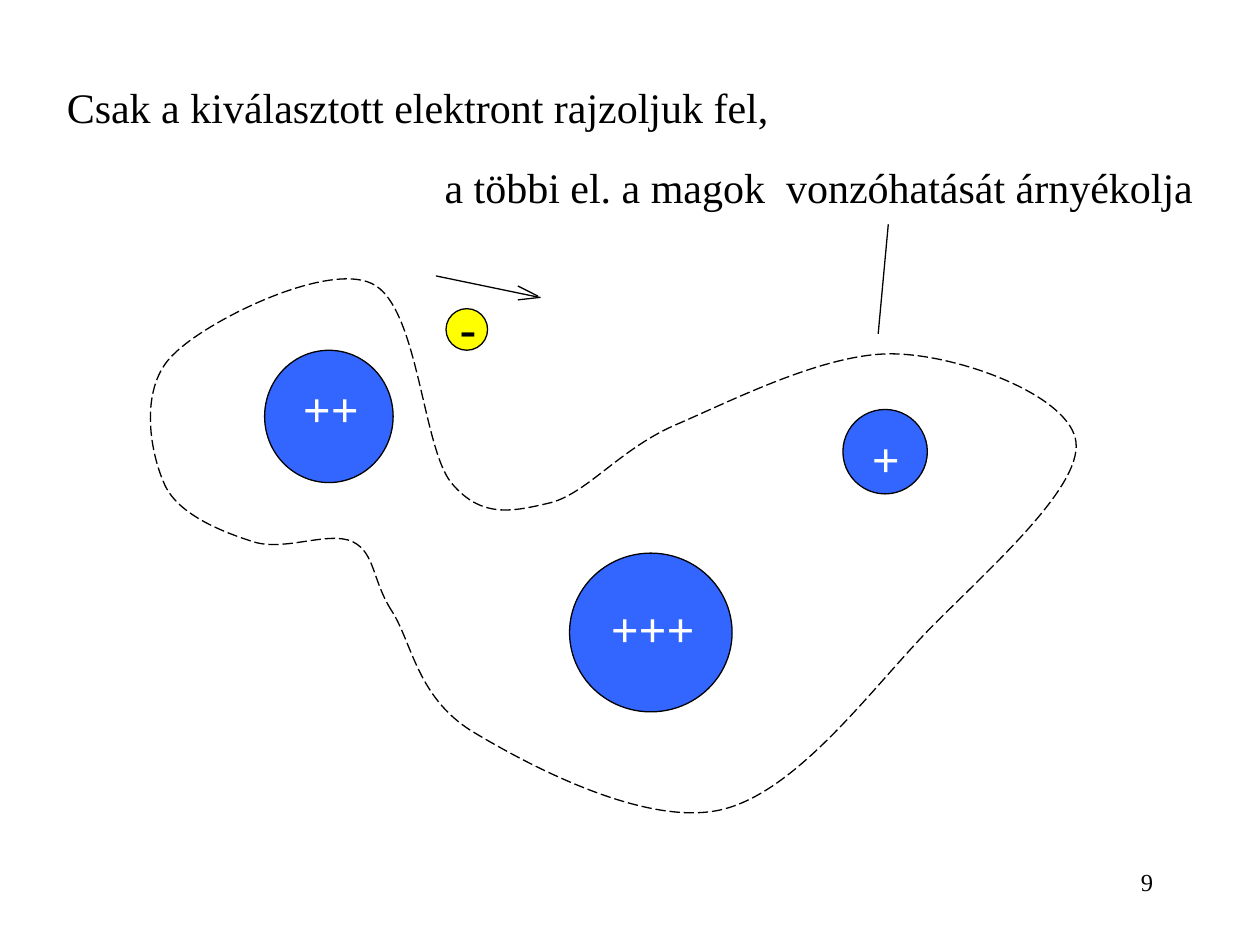
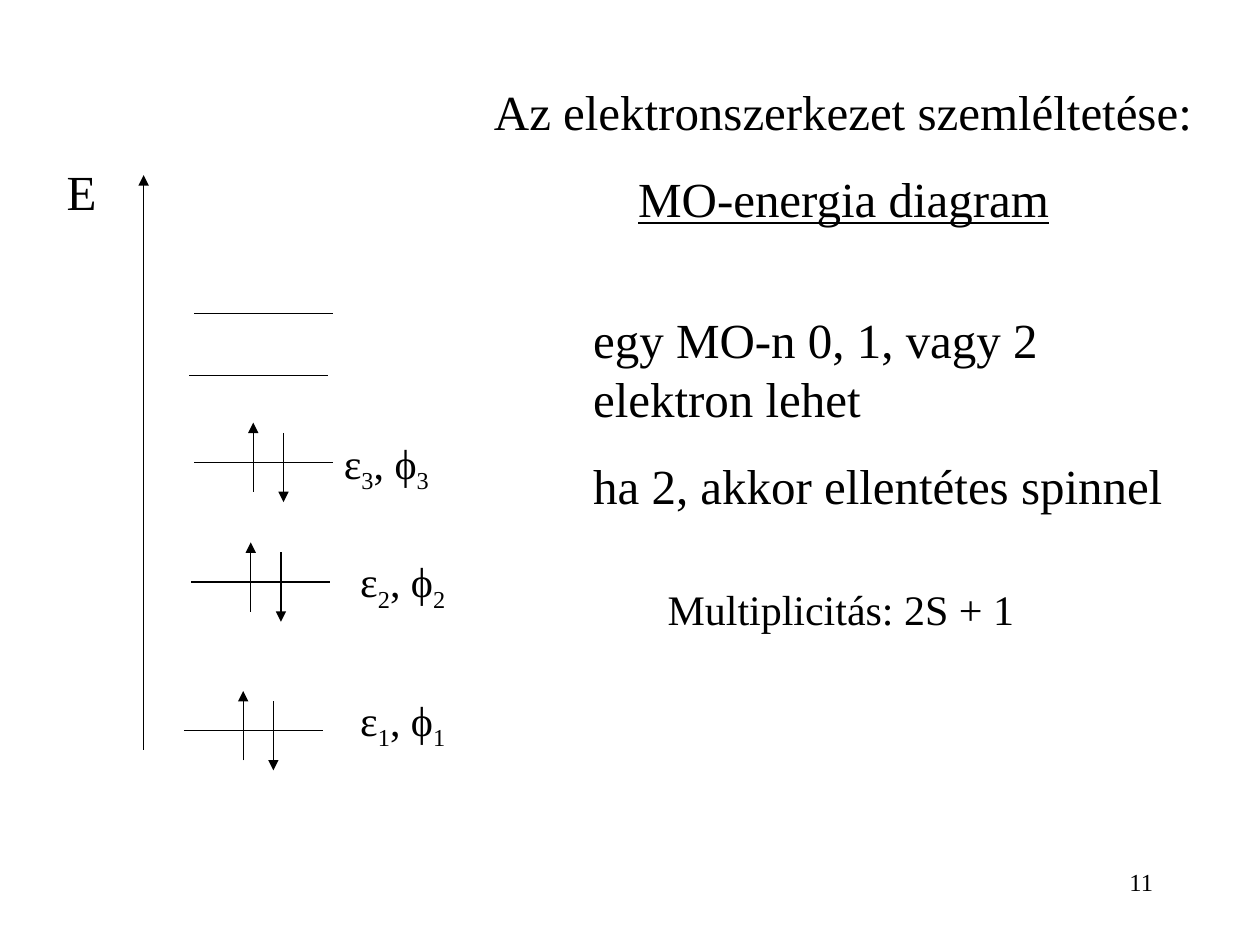
from lxml.etree import SubElement
from pptx import Presentation
from pptx.dml.color import RGBColor
from pptx.enum.dml import MSO_LINE
from pptx.enum.shapes import MSO_CONNECTOR, MSO_SHAPE
from pptx.enum.text import MSO_ANCHOR, MSO_AUTO_SIZE, PP_ALIGN
from pptx.oxml.ns import qn
from pptx.util import Inches, Pt

BLACK = RGBColor(0x00, 0x00, 0x00)
WHITE = RGBColor(0xFF, 0xFF, 0xFF)
YELLOW = RGBColor(0xFF, 0xFF, 0x00)
BLUE = RGBColor(0x33, 0x66, 0xFF)
FONT = "Times New Roman"
COLUMNS, ROWS = 100, 75

CLOUD_START = (31.1, 48.5)
CLOUD_CURVES = [
    [(29.5, 46), (29.8, 43.9), (28, 43)],
    [(26.1, 42.1), (22.6, 43.8), (20.1, 43)],
    [(17.6, 42.2), (14, 40.8), (13, 38.3)],
    [(11.9, 35.8), (11, 30.7), (13.8, 28.1)],
    [(16.5, 25.4), (25.9, 20.8), (29.5, 22.5)],
    [(33.2, 24.2), (33.5, 35.4), (35.8, 38.3)],
    [(38.2, 41.2), (40.7, 40.6), (43.7, 39.9)],
    [(46.7, 39.1), (49.3, 35.5), (53.9, 33.6)],
    [(58.5, 31.6), (66, 27.8), (71.3, 28.1)],
    [(76.5, 28.3), (85, 31.5), (85.4, 35.1)],
    [(85.8, 38.8), (78.4, 45.2), (73.6, 50.1)],
    [(68.9, 55), (63.1, 63), (57.1, 64.3)],
    [(51, 65.6), (41.7, 60.6), (37.4, 58)],
    [(33.1, 55.3), (32.7, 51), (31.1, 48.5)],
]


def apply(target, values):
    for name, value in values.items():
        setattr(target, name, value)


class Sketch:
    def __init__(self):
        self.deck = Presentation()
        apply(self.deck, {"slide_width": Inches(10), "slide_height": Inches(7.5)})
        self.column = self.deck.slide_width / COLUMNS
        self.row = self.deck.slide_height / ROWS

    def grid(self, x, y):
        return round(x * self.column), round(y * self.row)

    def area(self, left, top, width, height):
        return *self.grid(left, top), *self.grid(width, height)

    def new_page(self, number, title_area, title, size):
        self.page = self.deck.slides.add_slide(self.deck.slide_layouts[5])
        box = self.page.shapes.title
        apply(box, dict(zip(("left", "top", "width", "height"), self.area(*title_area))))
        self.fill_text(box, title, size)
        self.text((71.7, 68.3, 20.8, 5), [number], 14, align=PP_ALIGN.RIGHT)

    def text(self, area, paragraphs, size, **style):
        self.fill_text(self.page.shapes.add_textbox(*self.area(*area)), paragraphs, size, **style)

    def fill_text(self, box, paragraphs, size, align=PP_ALIGN.LEFT, color=BLACK,
                  bold=False, anchor=MSO_ANCHOR.TOP, wrap=True):
        frame = box.text_frame
        apply(frame, {"word_wrap": wrap, "auto_size": MSO_AUTO_SIZE.NONE,
                      "vertical_anchor": anchor})
        for index, content in enumerate(paragraphs):
            para = frame.add_paragraph() if index else frame.paragraphs[0]
            apply(para, {"alignment": align, "space_before": Pt(size * 0.57 if index else 0)})
            for part in [content] if isinstance(content, str) else content:
                words, extra = (part, {}) if isinstance(part, str) else part
                span = para.add_run()
                span.text = words
                apply(span.font, {"name": FONT, "size": Pt(size), "bold": bold})
                span.font.color.rgb = color
                if "align" in extra:
                    para.alignment = extra["align"]
                if "underline" in extra:
                    span.font.underline = extra["underline"]
                if "baseline" in extra:
                    span.font._element.set("baseline", extra["baseline"])

    def outline(self, shape, fill, dash=None):
        shape.shadow.inherit = False
        shape.fill.solid()
        shape.fill.fore_color.rgb = fill
        shape.line.color.rgb = BLACK
        apply(shape.line, {"width": Pt(0.75), "dash_style": dash})

    def particle(self, area, fill, label_area, label, **style):
        self.outline(self.page.shapes.add_shape(MSO_SHAPE.OVAL, *self.area(*area)), fill)
        self.text(label_area, [label], 28, align=PP_ALIGN.CENTER, bold=True,
                  anchor=MSO_ANCHOR.MIDDLE, **style)

    def line(self, start, end, arrow=False):
        line = self.page.shapes.add_connector(
            MSO_CONNECTOR.STRAIGHT, *self.grid(*start), *self.grid(*end))
        line.line.color.rgb = BLACK
        line.line.width = Pt(0.75)
        properties = line._element.spPr
        if arrow:
            SubElement(properties.find(qn("a:ln")), qn("a:tailEnd"), type="triangle")
        SubElement(properties, qn("a:effectLst"))

    def cloud(self, start, curves):
        builder = self.page.shapes.build_freeform(*self.grid(*start))
        builder.add_line_segments([self.grid(*point) for curve in curves for point in curve])
        shape = builder.convert_to_shape()
        track = next(shape._element.iter(qn("a:path")))
        segments = track.findall(qn("a:lnTo"))
        for close in track.findall(qn("a:close")):
            track.remove(close)
        for index in range(0, len(segments), 3):
            curve = SubElement(track, qn("a:cubicBezTo"))
            for segment in segments[index:index + 3]:
                curve.append(segment[0])
                track.remove(segment)
        SubElement(track, qn("a:close"))
        self.outline(shape, WHITE, MSO_LINE.LONG_DASH)

    def level(self, x, y, occupied):
        self.line((x, y), (x + 11, y))
        if occupied:
            self.line((x + 4.7, y + 2.35), (x + 4.7, y - 3.15), arrow=True)
            self.line((x + 7.1, y - 2.35), (x + 7.1, y + 3.15), arrow=True)

    def orbital_label(self, area, index):
        subscript = (index, {"baseline": "-25000"})
        self.text(area, [["ε", subscript, ", ϕ", subscript]], 24)


def draw_shielding(sketch):
    sketch.new_page("9", (4.3, 6, 90.6, 5),
                    ["Csak a kiválasztott elektront rajzoljuk fel,"], 24)
    sketch.cloud(CLOUD_START, CLOUD_CURVES)
    sketch.particle((35.4, 24.5, 3.3, 3.3), YELLOW, (35.5, 23.1, 3.3, 5.7), "-", wrap=False)
    nuclei = [
        ((66.9, 32.5, 6.7, 6.7), (67.8, 33.5, 5, 5.7), "+"),
        ((21, 27.8, 10.2, 10.5), (22.7, 29.5, 7.1, 5.7), "++"),
        ((45.2, 43.9, 12.9, 12.6), (47.3, 47, 9, 5.7), "+++"),
    ]
    for area, label_area, charge in nuclei:
        sketch.particle(area, BLUE, label_area, charge, color=WHITE)
    motion_arrow = [((34.6, 21.9), (42.8, 23.6)), ((42.9, 23.6), (41.1, 23.8)),
                    ((42.7, 23.5), (41.1, 22.7))]
    cloud_pointer = ((69.7, 26.5), (70.5, 17.8))
    for start, end in [*motion_arrow, cloud_pointer]:
        sketch.line(start, end)
    sketch.text((34.3, 12.3, 65.7, 5), ["a többi el. a magok  vonzóhatását árnyékolja"], 24)


def draw_energy_diagram(sketch):
    subtitle = ("MO-energia diagram", {"underline": True, "align": PP_ALIGN.CENTER})
    sketch.new_page("11", (38.2, 6, 57.5, 12.7),
                    ["Az elektronszerkezet szemléltetése:", [subtitle]], 28)
    sketch.text((46.1, 24.1, 49.6, 17.4),
                ["egy MO-n 0, 1, vagy 2 elektron lehet", "ha 2, akkor ellentétes spinnel"], 28)
    sketch.text((52, 45.8, 29.8, 5.1), ["Multiplicitás: 2S + 1"], 24, wrap=False)
    sketch.line((11.4, 59.5), (11.4, 13.9), arrow=True)
    sketch.text((4.3, 12.3, 6.3, 5.7), ["E"], 28)
    levels = [(14.6, 58, True), (15.2, 46.2, True), (15.4, 36.7, True),
              (15, 29.8, False), (15.4, 24.9, False)]
    for x, y, occupied in levels:
        sketch.level(x, y, occupied)
    labels = [(27.6, 54.6, 16.5, 5.1), (27.6, 43.6, 16.5, 5.1), (26.3, 34.2, 18.2, 5.1)]
    for index, area in enumerate(labels, start=1):
        sketch.orbital_label(area, str(index))


def main():
    sketch = Sketch()
    draw_shielding(sketch)
    draw_energy_diagram(sketch)
    sketch.deck.save("out.pptx")


if __name__ == "__main__":
    main()
